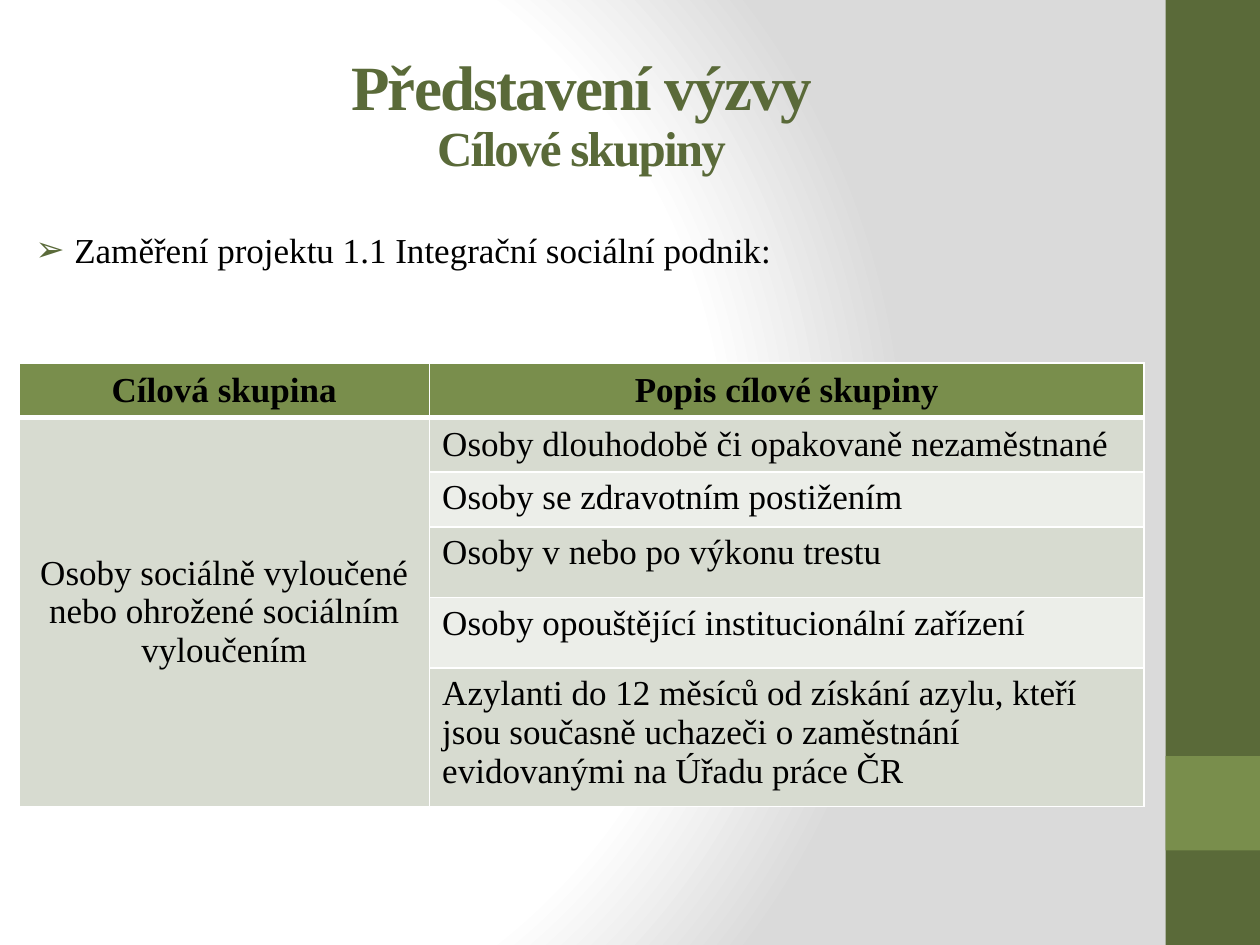
from typing import NamedTuple

from lxml import etree
from pptx import Presentation
from pptx.dml.color import RGBColor
from pptx.enum import shapes, text
from pptx.oxml import parse_xml
from pptx.oxml.ns import nsdecls, qn
from pptx.util import Inches, Pt

FONT = "Times New Roman"
BLACK, WHITE = "000000", "FFFFFF"
DARK_GREEN, GREEN = "5A6A39", "798E4C"
BAND_DARK, BAND_LIGHT = "D7DBD0", "ECEEE9"


class Bar(NamedTuple):
    top: float
    height: float
    color: str


class Row(NamedTuple):
    height: float
    description: str


SIDE_BARS = [Bar(0, 7.5, DARK_GREEN), Bar(6, 0.75, GREEN)]
COLUMN_WIDTHS = [3.26, 5.67]
HEADER_HEIGHT = 0.41
HEADERS = ["Cílová skupina", "Popis cílové skupiny"]
GROUP = "Osoby sociálně vyloučené nebo ohrožené sociálním vyloučením"
ROWS = [
    Row(0.41, "Osoby dlouhodobě či opakovaně nezaměstnané"),
    Row(0.41, "Osoby se zdravotním postižením"),
    Row(0.56, "Osoby v nebo po výkonu trestu"),
    Row(0.56, "Osoby opouštějící institucionální zařízení"),
    Row(1.03, "Azylanti do 12 měsíců od získání azylu, kteří jsou současně "
              "uchazeči o zaměstnání evidovanými na Úřadu práce ČR"),
]


def rgb(color: str) -> RGBColor:
    return RGBColor.from_string(color)


def place(sp, left: float, top: float, width: float, height: float) -> None:
    sp.left, sp.top = Inches(left), Inches(top)
    sp.width, sp.height = Inches(width), Inches(height)


def add_run(p, words: str, size: float = 20, color: str = BLACK, bold: bool = False):
    r = p.add_run()
    r.text = words
    r.font.name, r.font.size, r.font.bold = FONT, Pt(size), bold
    r.font.color.rgb = rgb(color)
    return r


def set_background(s) -> None:
    """Radial gradient from white on the left to grey on the right."""
    stops = "".join(
        f'<a:gs pos="{pos * 1000}"><a:srgbClr val="{color}"/></a:gs>'
        for pos, color in [(0, WHITE), (75, WHITE), (100, "DADADA")])
    s.element.cSld.insert(0, parse_xml(
        f'<p:bg {nsdecls("p", "a")}><p:bgPr><a:gradFill rotWithShape="1">'
        f'<a:gsLst>{stops}</a:gsLst><a:path path="circle">'
        '<a:fillToRect l="20000" t="50000" r="100000" b="50000"/></a:path>'
        '</a:gradFill><a:effectLst/></p:bgPr></p:bg>'))


def add_bar(s, bar: Bar) -> None:
    sp = s.shapes.add_shape(shapes.MSO_SHAPE.RECTANGLE, Inches(9.25),
                            Inches(bar.top), Inches(0.75), Inches(bar.height))
    sp.shadow.inherit = False
    sp.fill.solid()
    sp.fill.fore_color.rgb = rgb(bar.color)
    sp.line.fill.background()


def fill_title(sp) -> None:
    place(sp, 0.45, 0.99, 8.33, 0.47)
    tf = sp.text_frame
    tf.auto_size = text.MSO_AUTO_SIZE.NONE
    tf.vertical_anchor = text.MSO_ANCHOR.MIDDLE
    p = tf.paragraphs[0]
    p.alignment = text.PP_ALIGN.CENTER
    p.line_spacing = 0.9
    for words, size in [("Představení výzvy", 36), ("Cílové skupiny", 28)]:
        r = add_run(p, words, size, DARK_GREEN, True)
        r.font._element.set("spc", "-100")
        p.add_line_break()
    # The breaks and the paragraph end keep the height of the larger line.
    marks = [etree.SubElement(br, qn("a:rPr")) for br in p._p.findall(qn("a:br"))]
    marks.append(etree.SubElement(p._p, qn("a:endParaRPr")))
    for mark in marks:
        mark.set("sz", "3600")
        etree.SubElement(mark, qn("a:latin")).set("typeface", FONT)


def fill_body(sp) -> None:
    place(sp, 0.18, 1.76, 6.08, 0.44)
    tf = sp.text_frame
    tf.word_wrap = False
    tf.auto_size = text.MSO_AUTO_SIZE.SHAPE_TO_FIT_TEXT
    p = tf.paragraphs[0]
    p.space_before = Pt(0)
    add_run(p, "Zaměření projektu 1.1 Integrační sociální podnik:")
    pPr = p._p.get_or_add_pPr()
    indent = Inches(0.31)
    pPr.set("marL", str(indent))
    pPr.set("indent", str(-indent))
    color = etree.SubElement(pPr, qn("a:buClr"))
    etree.SubElement(color, qn("a:srgbClr")).set("val", DARK_GREEN)
    etree.SubElement(pPr, qn("a:buChar")).set("char", "➢")


def set_borders(cell, top: float = 1, bottom: float = 1) -> None:
    tcPr = cell._tc.get_or_add_tcPr()
    for side, width in [("L", 1), ("R", 1), ("T", top), ("B", bottom)]:
        ln = etree.SubElement(tcPr, qn(f"a:ln{side}"), w=str(Pt(width)))
        fill = etree.SubElement(ln, qn("a:solidFill"))
        etree.SubElement(fill, qn("a:srgbClr")).set("val", WHITE)


def fill_cell(cell, words: str, color: str, centered: bool = False,
              middle: bool = False, bold: bool = False) -> None:
    cell.fill.solid()
    cell.fill.fore_color.rgb = rgb(color)
    cell.vertical_anchor = text.MSO_ANCHOR.MIDDLE if middle else text.MSO_ANCHOR.TOP
    p = cell.text_frame.paragraphs[0]
    p.alignment = text.PP_ALIGN.CENTER if centered else text.PP_ALIGN.LEFT
    add_run(p, words, bold=bold)


def add_groups_table(s) -> None:
    heights = [HEADER_HEIGHT] + [row.height for row in ROWS]
    table = s.shapes.add_table(
        len(heights), len(COLUMN_WIDTHS), Inches(0.15), Inches(2.88),
        Inches(sum(COLUMN_WIDTHS)), Inches(sum(heights))).table
    for column, width in zip(table.columns, COLUMN_WIDTHS):
        column.width = Inches(width)
    for i, height in enumerate(heights):
        table.rows[i].height = Inches(height)
        for cell in table.rows[i].cells:
            set_borders(cell, top=3 if i == 1 else 1, bottom=3 if i == 0 else 1)

    for j, words in enumerate(HEADERS):
        fill_cell(table.cell(0, j), words, GREEN, centered=True, middle=True, bold=True)
    table.cell(1, 0).merge(table.cell(len(ROWS), 0))
    fill_cell(table.cell(1, 0), GROUP, BAND_DARK, centered=True, middle=True)
    for i, row in enumerate(ROWS, start=1):
        fill_cell(table.cell(i, 1), row.description,
                  BAND_DARK if i % 2 else BAND_LIGHT, middle=i == 1)
    table.cell(1, 1).text_frame.paragraphs[0].alignment = text.PP_ALIGN.JUSTIFY


def main() -> None:
    prs = Presentation()
    prs.slide_width, prs.slide_height = Inches(10), Inches(7.5)
    s = prs.slides.add_slide(prs.slide_layouts[1])
    set_background(s)
    for bar in SIDE_BARS:
        add_bar(s, bar)
    fill_title(s.shapes.title)
    add_groups_table(s)
    fill_body(s.placeholders[1])
    prs.save("out.pptx")


if __name__ == "__main__":
    main()
